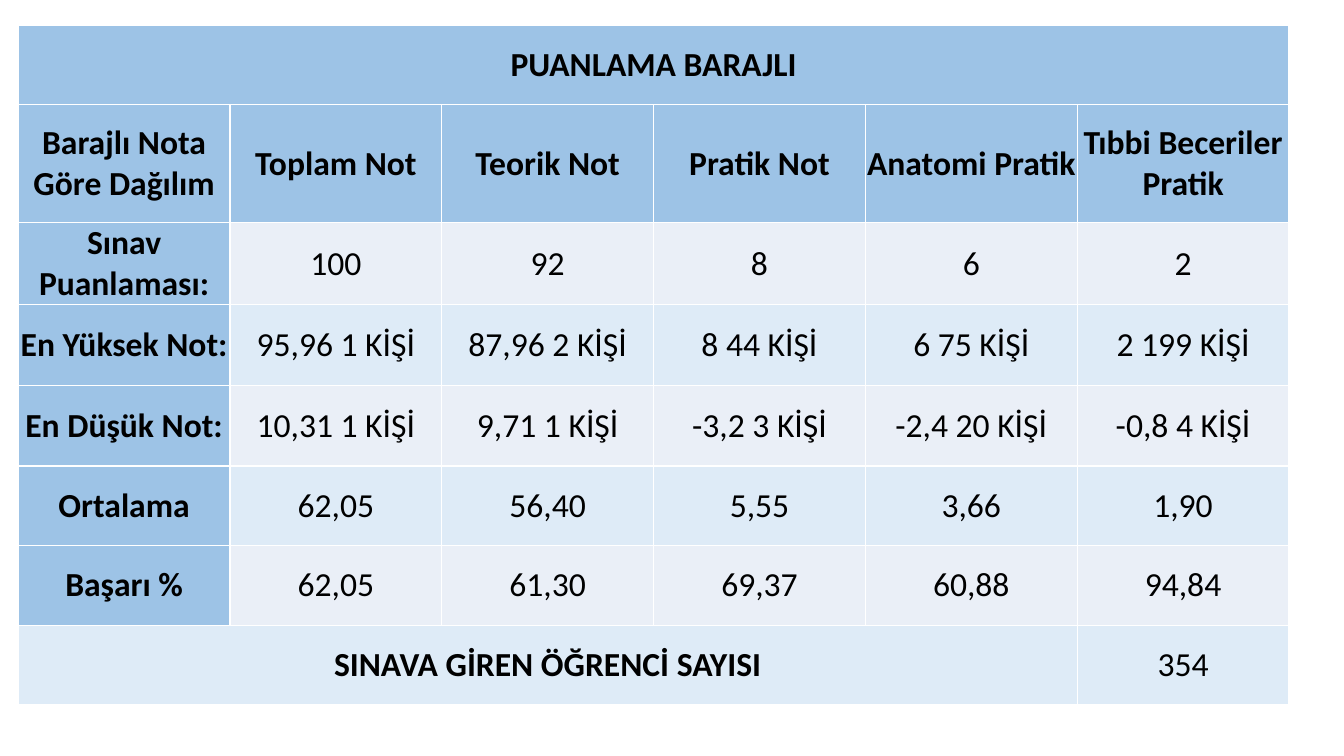
from lxml import etree
from pptx import Presentation
from pptx.dml.color import RGBColor
from pptx.enum.text import MSO_ANCHOR, PP_ALIGN
from pptx.oxml.ns import qn
from pptx.util import Pt

CENTER = PP_ALIGN.CENTER
MIDDLE = MSO_ANCHOR.MIDDLE

BLACK = RGBColor(0x00, 0x00, 0x00)
WHITE = RGBColor(0xFF, 0xFF, 0xFF)
HEADER_BLUE = RGBColor(0x9D, 0xC3, 0xE6)
PALE_BLUE = RGBColor(0xDE, 0xEB, 0xF7)
PALE_GREY = RGBColor(0xEA, 0xEF, 0xF7)

EM_SPACE = " "  # one wide space between a score and its head count

TITLE = "PUANLAMA BARAJLI"
HEADINGS = ["Barajlı Nota Göre Dağılım", "Toplam Not", "Teorik Not",
            "Pratik Not", "Anatomi Pratik", "Tıbbi Beceriler Pratik"]
SCORES = [
    ("Sınav Puanlaması:", ["100", "92", "8", "6", "2"]),
    ("En Yüksek Not:", [("95,96", "1 KİŞİ"), ("87,96", "2 KİŞİ"), ("8", "44 KİŞİ"),
                        ("6", "75 KİŞİ"), ("2", "199 KİŞİ")]),
    ("En Düşük Not:", [("10,31", "1 KİŞİ"), ("9,71", "1 KİŞİ"), ("-3,2", "3 KİŞİ"),
                       ("-2,4", "20 KİŞİ"), ("-0,8", "4 KİŞİ")]),
    ("Ortalama", ["62,05", "56,40", "5,55", "3,66", "1,90"]),
    ("Başarı %", ["62,05", "61,30", "69,37", "60,88", "94,84"]),
]
STUDENTS_LABEL, STUDENTS = "SINAVA GİREN ÖĞRENCİ SAYISI", "354"

ROW_HEIGHTS = [56.9, 84.2] + [57.6] * 3 + [56.9] * 3
COLUMN_WIDTH = 151.3


class SlideBuilder:
    """Holds the text style and the current slide."""

    def __init__(self, slide, font_name, font_size):
        self.slide = slide
        self.font_name = font_name
        self.font_size = font_size

    def table(self, left, top, column_widths, row_heights):
        shape = self.slide.shapes.add_table(
            len(row_heights), len(column_widths), Pt(left), Pt(top),
            Pt(sum(column_widths)), Pt(sum(row_heights)))
        table = shape.table
        table.first_row = table.horz_banding = False
        for column, width in zip(table.columns, column_widths):
            column.width = Pt(width)
        for row, height in zip(table.rows, row_heights):
            row.height = Pt(height)
        for cell in table.iter_cells():
            self.borders(cell, WHITE, 1)
        return table

    def borders(self, cell, color, width):
        properties = cell._tc.get_or_add_tcPr()
        for side in ("a:lnL", "a:lnR", "a:lnT", "a:lnB"):
            line = etree.SubElement(properties, qn(side), w=str(Pt(width)))
            fill = etree.SubElement(line, qn("a:solidFill"))
            etree.SubElement(fill, qn("a:srgbClr"), val=str(color))

    def cell(self, cell, text, fill, bold=False):
        cell.fill.solid()
        cell.fill.fore_color.rgb = fill
        cell.vertical_anchor = MIDDLE
        cell.margin_left = cell.margin_right = 0
        cell.margin_top = cell.margin_bottom = 0
        cell.text = text
        paragraph = cell.text_frame.paragraphs[0]
        paragraph.alignment = CENTER
        font = paragraph.font
        font.name, font.size, font.bold = self.font_name, Pt(self.font_size), bold
        font.color.rgb = BLACK


def main():
    presentation = Presentation()
    presentation.slide_width, presentation.slide_height = Pt(960), Pt(540)
    slide = presentation.slides.add_slide(presentation.slide_layouts[6])
    builder = SlideBuilder(slide, "Calibri", 24)

    table = builder.table(13, 18, [COLUMN_WIDTH] * len(HEADINGS), ROW_HEIGHTS)
    last_row, last_column = len(ROW_HEIGHTS) - 1, len(HEADINGS) - 1

    # Title and column headings
    table.cell(0, 0).merge(table.cell(0, last_column))
    builder.cell(table.cell(0, 0), TITLE, HEADER_BLUE, bold=True)
    for column, heading in enumerate(HEADINGS):
        builder.cell(table.cell(1, column), heading, HEADER_BLUE, bold=True)

    # Score rows in alternating tints
    for row, (label, values) in enumerate(SCORES, start=2):
        builder.cell(table.cell(row, 0), label, HEADER_BLUE, bold=True)
        tint = PALE_BLUE if row % 2 else PALE_GREY
        for column, value in enumerate(values, start=1):
            text = value if isinstance(value, str) else EM_SPACE.join(value)
            builder.cell(table.cell(row, column), text, tint)

    # Number of students
    table.cell(last_row, 0).merge(table.cell(last_row, last_column - 1))
    builder.cell(table.cell(last_row, 0), STUDENTS_LABEL, PALE_BLUE, bold=True)
    builder.cell(table.cell(last_row, last_column), STUDENTS, PALE_BLUE)

    presentation.save("out.pptx")


if __name__ == "__main__":
    main()
